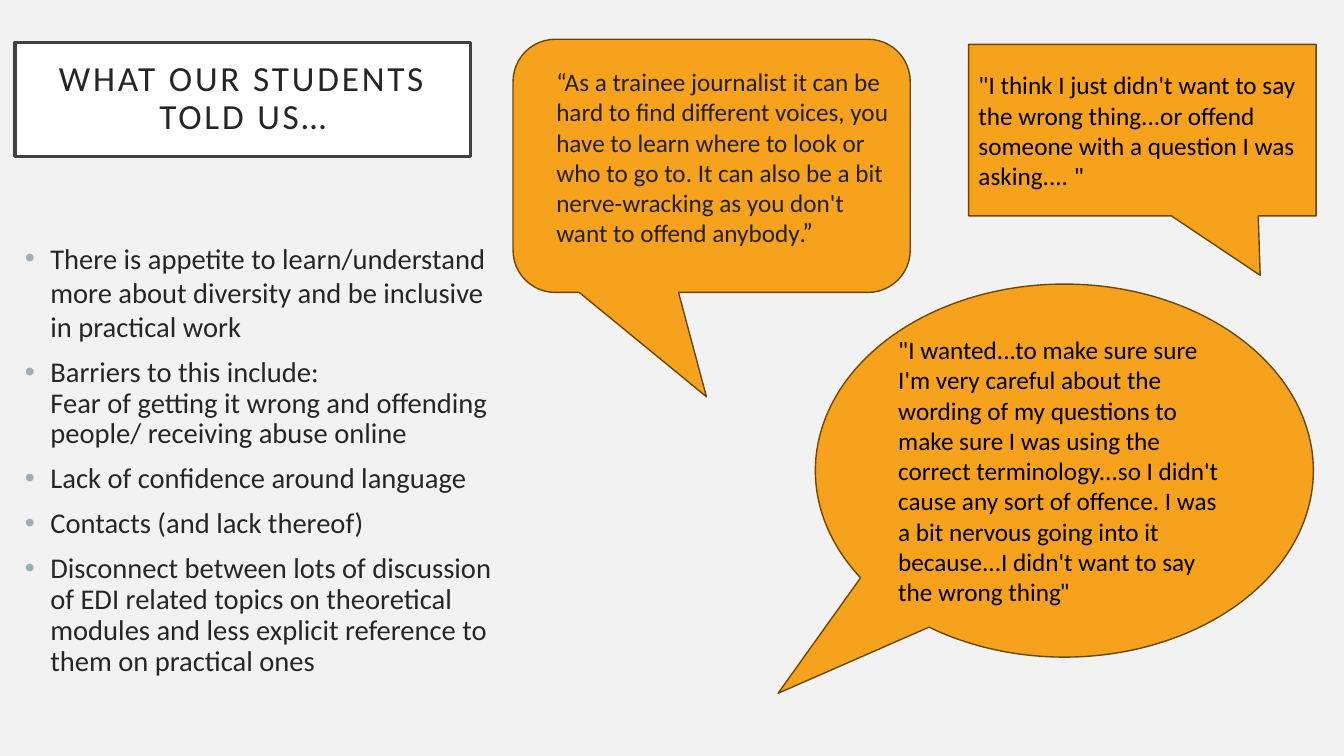
from lxml.etree import SubElement
from pptx import Presentation
from pptx.dml.color import RGBColor
from pptx.enum.shapes import MSO_SHAPE as Preset
from pptx.enum.text import MSO_ANCHOR as Anchor, PP_ALIGN as Align
from pptx.oxml.ns import qn
from pptx.util import Cm, Pt

COLOURS = {
    "background": "F2F2F2", "white": "FFFFFF", "frame": "404040",
    "text": "262626", "bullet": "9BAFB5", "callout": "F6A21D",
    "outline": "6C470D", "speech": "212121", "black": "000000",
}

TITLE = "WHAT OUR STUDENTS TOLD US…"
FINDINGS = [
    "There is appetite to learn/understand more about diversity and be inclusive in practical work",
    "Barriers to this include: \nFear of getting it wrong and offending people/ receiving abuse online",
    "Lack of confidence around language",
    "Contacts (and lack thereof)",
    "Disconnect between lots of discussion of EDI related topics on theoretical modules "
    "and less explicit reference to them on practical ones",
]
VOICES_QUOTE = (
    "“As a trainee journalist it can be hard to find different voices, you have to learn "
    "where to look or who to go to. It can also be a bit nerve-wracking as you don't want "
    "to offend anybody"
)
WORRY_QUOTE = (
    "\"I think I just didn't want to say the wrong thing...or offend someone "
    "with a question I was asking.... \""
)
WORDING_QUOTE = (
    "\"I wanted...to make sure sure I'm very careful about the wording of my questions to "
    "make sure I was using the correct terminology...so I didn't cause any sort of offence. "
    "I was a bit nervous going into it because...I didn't want to say the wrong thing"
)


def colour(name):
    return RGBColor.from_string(COLOURS[name])


def set_font(font, size, tint, name="Calibri"):
    font.name = name
    font.size = Pt(size)
    font.color.rgb = colour(tint)


def add_outlined(page, preset, box, fill, line, width):
    shape = page.shapes.add_shape(preset, *map(Cm, box))
    shape.shadow.inherit = False
    shape.fill.solid()
    shape.fill.fore_color.rgb = colour(fill)
    shape.line.color.rgb = colour(line)
    shape.line.width = Pt(width)
    shape.text_frame.word_wrap = True
    shape.text_frame.vertical_anchor = Anchor.MIDDLE
    return shape


def add_title(page, box):
    frame = add_outlined(page, Preset.RECTANGLE, box, "white", "frame", 2.5).text_frame
    frame.margin_left = frame.margin_right = Cm(0.5)
    frame.margin_top = frame.margin_bottom = Cm(0.5)
    para = frame.paragraphs[0]
    para.alignment = Align.CENTER
    para.line_spacing = 0.9
    span = para.add_run()
    span.text = TITLE
    set_font(span.font, 25.2, "text")
    span._r.get_or_add_rPr().set("spc", "200")


def add_bullet(para):
    props = para._p.get_or_add_pPr()
    props.set("marL", str(Cm(0.64)))
    props.set("indent", str(-Cm(0.64)))
    tint = SubElement(props, qn("a:buClr"))
    SubElement(tint, qn("a:srgbClr")).set("val", COLOURS["bullet"])
    SubElement(props, qn("a:buFont")).set("typeface", "Arial")
    SubElement(props, qn("a:buChar")).set("char", "•")


def add_findings(page, box):
    frame = page.shapes.add_textbox(*map(Cm, box)).text_frame
    frame.word_wrap = True
    for index, finding in enumerate(FINDINGS):
        para = frame.add_paragraph() if index else frame.paragraphs[0]
        para.text = finding
        para.line_spacing = 0.9 if index else 1.0
        para.space_before = Pt(10)
        add_bullet(para)
        set_font(para.font, 20.4, "text")


def write_quote(frame, quote, tint, ending="", ending_font="Calibri"):
    para = frame.paragraphs[0]
    para.alignment = Align.LEFT
    for words, name in ((quote, "Calibri"), (ending, ending_font)):
        if words:
            span = para.add_run()
            span.text = words
            set_font(span.font, 18, tint, name)


def add_callout(page, preset, box, tail):
    callout = add_outlined(page, preset, box, "callout", "outline", 1)
    for index, value in enumerate(tail):
        callout.adjustments[index] = value
    return callout


def add_voices_callout(page, box):
    left, top, width, height = box
    add_callout(page, Preset.ROUNDED_RECTANGULAR_CALLOUT, box, (-0.013, 0.912, 0.167))
    inner = (left + 0.84, top + 0.56, width - 1.09, height - 1.5)
    frame = page.shapes.add_textbox(*map(Cm, inner)).text_frame
    frame.word_wrap = True
    write_quote(frame, VOICES_QUOTE, "speech", ".”", "Lato")


def add_worry_callout(page, box):
    callout = add_callout(page, Preset.RECTANGULAR_CALLOUT, box, (0.339, 0.847))
    write_quote(callout.text_frame, WORRY_QUOTE, "black")


def add_wording_callout(page, box):
    callout = add_callout(page, Preset.OVAL_CALLOUT, box, (-0.575, 0.597))
    write_quote(callout.text_frame, WORDING_QUOTE, "black", "\"", "Karla")


def main():
    deck = Presentation()
    deck.slide_width, deck.slide_height = Cm(33.87), Cm(19.05)
    page = deck.slides.add_slide(deck.slide_layouts[6])
    page.background.fill.solid()
    page.background.fill.fore_color.rgb = colour("background")
    add_title(page, (0.38, 1.07, 11.48, 2.87))
    add_findings(page, (0.38, 5.94, 12.55, 13.11))
    add_voices_callout(page, (12.93, 0.99, 10.01, 6.38))
    add_worry_callout(page, (24.41, 1.12, 8.76, 4.32))
    add_wording_callout(page, (20.55, 7.16, 12.55, 9.4))
    deck.save("out.pptx")


if __name__ == "__main__":
    main()
